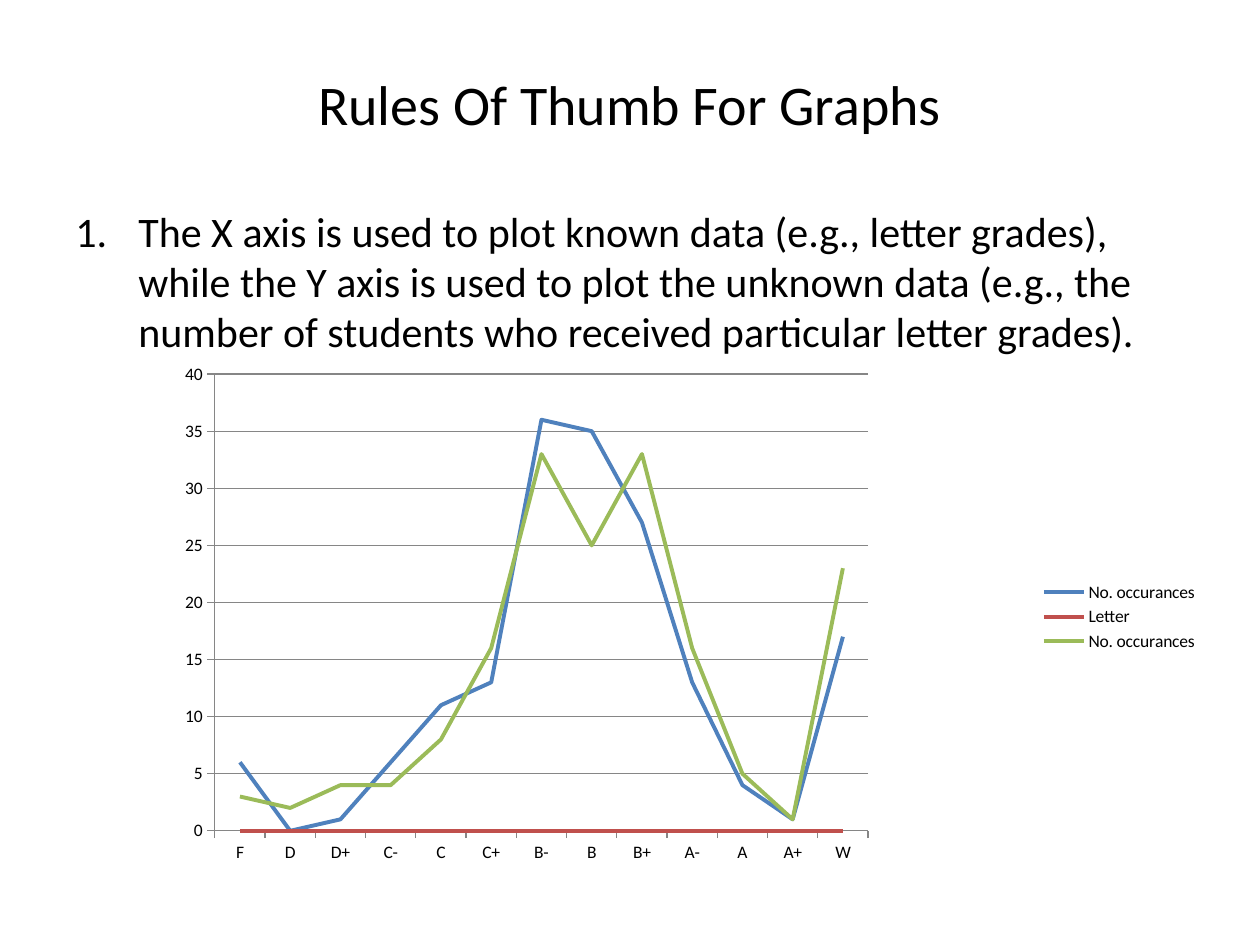
from lxml import etree
from pptx import Presentation
from pptx.chart.data import CategoryChartData
from pptx.dml.color import RGBColor
from pptx.enum.chart import XL_CHART_TYPE, XL_LEGEND_POSITION, XL_MARKER_STYLE, XL_TICK_MARK
from pptx.enum.text import MSO_ANCHOR, PP_ALIGN
from pptx.oxml import parse_xml
from pptx.oxml.ns import nsdecls, qn
from pptx.util import Cm, Pt

LINE_CHART = XL_CHART_TYPE.LINE
LEGEND_RIGHT = XL_LEGEND_POSITION.RIGHT
NO_MARKER = XL_MARKER_STYLE.NONE
TICK_OUTSIDE = XL_TICK_MARK.OUTSIDE
MIDDLE, TOP = MSO_ANCHOR.MIDDLE, MSO_ANCHOR.TOP
CENTER, LEFT = PP_ALIGN.CENTER, PP_ALIGN.LEFT

FONT = "Calibri"
COLORS = {"text": "000000", "axis": "868686", "first": "4F81BD",
          "letter": "C0504D", "second": "9BBB59"}


def style_font(font, size):
    font.name = FONT
    font.size = Pt(size)
    font.color.rgb = RGBColor.from_string(COLORS["text"])


def add_text(text, top, height, size, anchor, alignment):
    shape = slide.shapes.add_textbox(Cm(1.27), Cm(top), Cm(22.86), Cm(height))
    shape.text_frame.word_wrap = True
    shape.text_frame.vertical_anchor = anchor
    paragraph = shape.text_frame.paragraphs[0]
    paragraph.text = text
    paragraph.alignment = alignment
    style_font(paragraph.font, size)
    return paragraph


presentation = Presentation()
presentation.slide_width = Cm(25.4)
presentation.slide_height = Cm(19.05)
slide = presentation.slides.add_slide(presentation.slide_layouts[6])

# Title
add_text("Rules Of Thumb For Graphs", 0.76, 2.62, 32, MIDDLE, CENTER)

# Numbered rule
rule = add_text(
    "The X axis is used to plot known data (e.g., letter grades), while the Y axis "
    "is used to plot the unknown data (e.g., the number of students who received "
    "particular letter grades).", 4.01, 13.97, 24, TOP, LEFT)
rule.space_before = Pt(4.8)
properties = rule._p.get_or_add_pPr()
properties.set("marL", str(Cm(1.27)))
properties.set("indent", str(-Cm(1.27)))
numbering = parse_xml(f'<a:buAutoNum {nsdecls("a")} type="arabicPeriod"/>')
properties.insert_element_before(numbering, "a:tabLst", "a:defRPr", "a:extLst")

# Grade chart
grades = ["F", "D", "D+", "C-", "C", "C+", "B-", "B", "B+", "A-", "A", "A+", "W"]
series_rows = [
    ("No. occurances", "first", [6, 0, 1, 6, 11, 13, 36, 35, 27, 13, 4, 1, 17]),
    ("Letter", "letter", [0] * len(grades)),
    ("No. occurances", "second", [3, 2, 4, 4, 8, 16, 33, 25, 33, 16, 5, 1, 23]),
]
chart_data = CategoryChartData()
chart_data.categories = grades
for name, _, values in series_rows:
    chart_data.add_series(name, values)
chart = slide.shapes.add_chart(
    LINE_CHART, Cm(2.82), Cm(6.68), Cm(21.59), Cm(11.51), chart_data).chart
style_font(chart.font, 10)
chart.has_title = False
chart.has_legend = True
chart.legend.position = LEGEND_RIGHT
chart.legend.include_in_layout = False

# Series lines
plot = chart.plots[0]
plot.vary_by_categories = False
for series, (_, color, _) in zip(plot.series, series_rows):
    series.smooth = False
    series.marker.style = NO_MARKER
    series.format.line.width = Pt(2.25)
    series.format.line.color.rgb = RGBColor.from_string(COLORS[color])

# Axes and gridlines
chart.value_axis.minimum_scale = 0
chart.value_axis.maximum_scale = 40
chart.value_axis.major_unit = 5
chart.value_axis.has_major_gridlines = True
for axis in (chart.category_axis, chart.value_axis):
    axis.major_tick_mark = TICK_OUTSIDE
for part in (chart.category_axis, chart.value_axis, chart.value_axis.major_gridlines):
    part.format.line.width = Pt(0.75)
    part.format.line.color.rgb = RGBColor.from_string(COLORS["axis"])

# Inner plot area, as fractions of the chart
plot_area = chart._chartSpace.chart.plotArea
for old_layout in plot_area.findall(qn("c:layout")):
    plot_area.remove(old_layout)
layout = parse_xml(f'<c:layout {nsdecls("c")}><c:manualLayout/></c:layout>')
for tag, value in [("layoutTarget", "inner"), ("xMode", "edge"), ("yMode", "edge"),
                   ("x", "0.07"), ("y", "0.075"), ("w", "0.61"), ("h", "0.8")]:
    etree.SubElement(layout[0], qn(f"c:{tag}")).set("val", value)
plot_area.insert(0, layout)

presentation.save("out.pptx")
